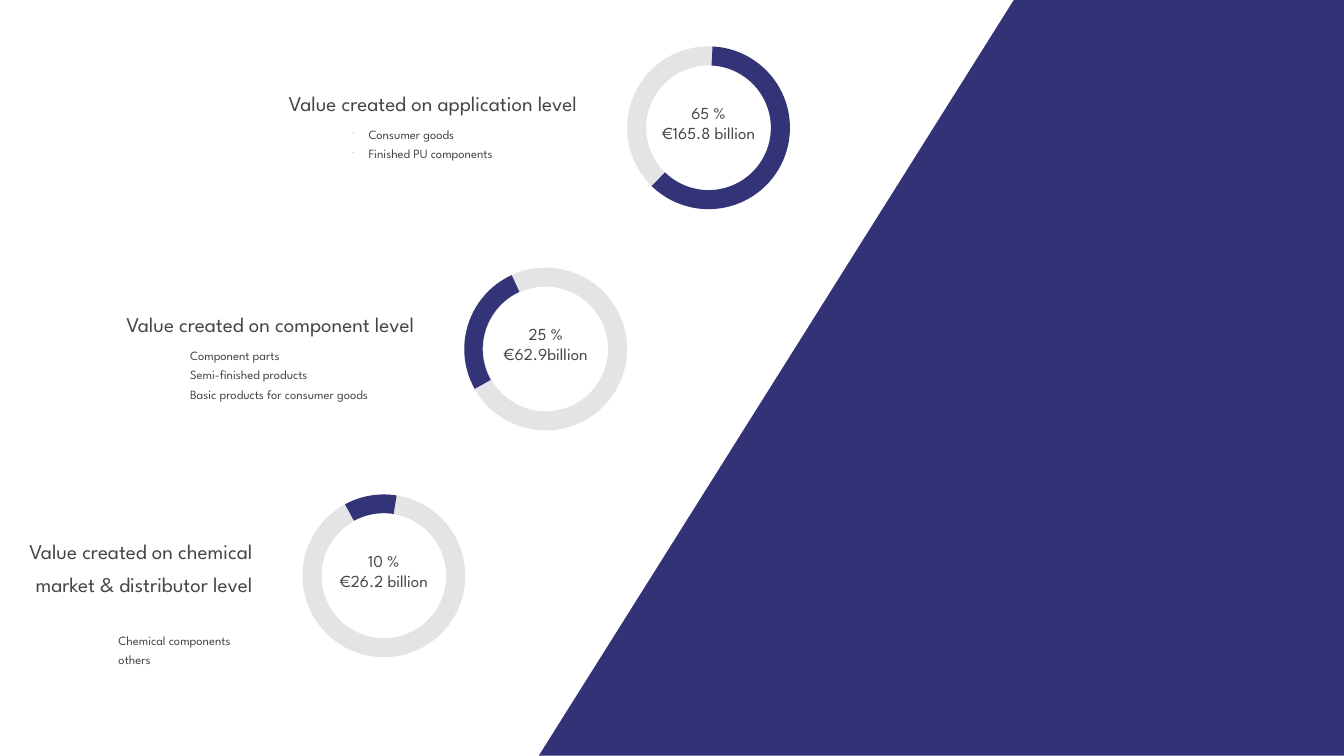
from lxml.etree import SubElement
from pptx import Presentation
from pptx.dml.color import RGBColor
from pptx.enum.shapes import MSO_SHAPE
from pptx.enum.text import MSO_ANCHOR, MSO_AUTO_SIZE, PP_ALIGN
from pptx.oxml.ns import qn
from pptx.util import Inches, Pt

FONT = "League Spartan"
NAVY, BLUE, GREY, INK = "333277", "333377", "E4E4E4", "464646"
RING, TURN = 3.23, 267
PANEL = [(20.11, 0), (26.66, 0), (26.66, 14.99), (10.69, 14.99)]

LEVELS = [
    dict(head="Value created on application level", wide=8.92,
         items=["Consumer goods", "Finished PU components"], dots=True,
         value=["65 %", "€165.8 billion"], ring=(12.44, 0.92),
         arc=(272.8, 134.3), band=0.117, list_at=(-5.64, 1.4)),
    dict(head="Value created on component level", wide=8.07,
         items=["Component parts", "Semi-finished products",
                "Basic products for consumer goods"], dots=False,
         value=["25 %", "€62.9billion"], ring=(9.21, 5.31),
         arc=(150.7, 245.3), band=0.113, list_at=(-5.64, 1.4)),
    dict(head="Value created on chemical market & distributor level", wide=5.21,
         items=["Chemical components", "others"], dots=False,
         value=["10 %", "€26.2 billion"], ring=(6, 9.81),
         arc=(241.5, 279), band=0.115, list_at=(-3.85, 2.55)),
]


def color(code):
    return RGBColor.from_string(code)


def paint(shape, code):
    shape.shadow.inherit = False
    shape.fill.solid()
    shape.fill.fore_color.rgb = color(code)
    shape.line.fill.background()


def add_dot(para):
    props = para._p.get_or_add_pPr()
    props.set("marL", str(Inches(0.31)))
    props.set("indent", str(-Inches(0.31)))
    tint = SubElement(props, qn("a:buClr"))
    SubElement(tint, qn("a:srgbClr"), val=BLUE)
    SubElement(props, qn("a:buSzPct"), val="25000")
    SubElement(props, qn("a:buChar"), char="•")


def add_text(slide, lines, x, y, w, h, size, align=PP_ALIGN.LEFT,
             space=None, dots=False, wrap=True, pad=(0.2, 0.1),
             anchor=MSO_ANCHOR.TOP):
    frame = slide.shapes.add_textbox(
        Inches(x), Inches(y), Inches(w), Inches(h)).text_frame
    frame.word_wrap = wrap
    frame.auto_size = MSO_AUTO_SIZE.NONE if wrap else MSO_AUTO_SIZE.SHAPE_TO_FIT_TEXT
    frame.vertical_anchor = anchor
    frame.margin_left = frame.margin_right = Inches(pad[0])
    frame.margin_top = frame.margin_bottom = Inches(pad[1])
    for i, line in enumerate(lines):
        para = frame.add_paragraph() if i else frame.paragraphs[0]
        if dots:
            add_dot(para)
        para.alignment = align
        para.line_spacing = space
        run = para.add_run()
        run.text = line
        run.font.size = Pt(size)
        run.font.name = FONT
        run.font.color.rgb = color(INK)


def add_ring(slide, x, y, arc, band):
    box = Inches(x), Inches(y), Inches(RING), Inches(RING)
    base = slide.shapes.add_shape(MSO_SHAPE.DONUT, *box)
    base.adjustments[0] = 0.117
    paint(base, GREY)
    part = slide.shapes.add_shape(MSO_SHAPE.BLOCK_ARC, *box)
    part.rotation = TURN
    for i, angle in enumerate(arc):
        part.adjustments[i] = (angle - TURN) % 360 * 0.6
    part.adjustments[2] = band
    paint(part, BLUE)


def add_level(slide, level):
    x, y = level["ring"]
    dx, dy = level["list_at"]
    wide = level["wide"]
    add_ring(slide, x, y, level["arc"], level["band"])
    add_text(slide, level["items"], x + dx, y + dy, 4.85, 1.15, 18,
             space=1.3, dots=level["dots"])
    add_text(slide, [level["head"]], x - 0.79 - wide, y + 0.63, wide, 0.88, 30,
             align=PP_ALIGN.RIGHT, space=1.3)
    add_text(slide, level["value"], x + (RING - 2.24) / 2, y + 1.06, 2.24, 0.91,
             24, align=PP_ALIGN.CENTER, wrap=False, pad=(0.1, 0.05),
             anchor=MSO_ANCHOR.MIDDLE)


def main():
    deck = Presentation()
    deck.slide_width, deck.slide_height = Inches(26.66), Inches(15)
    slide = deck.slides.add_slide(deck.slide_layouts[6])
    points = [(Inches(x), Inches(y)) for x, y in PANEL]
    pen = slide.shapes.build_freeform(*points[0])
    pen.add_line_segments(points[1:], close=True)
    paint(pen.convert_to_shape(), NAVY)
    for level in LEVELS:
        add_level(slide, level)
    deck.save("out.pptx")


if __name__ == "__main__":
    main()
